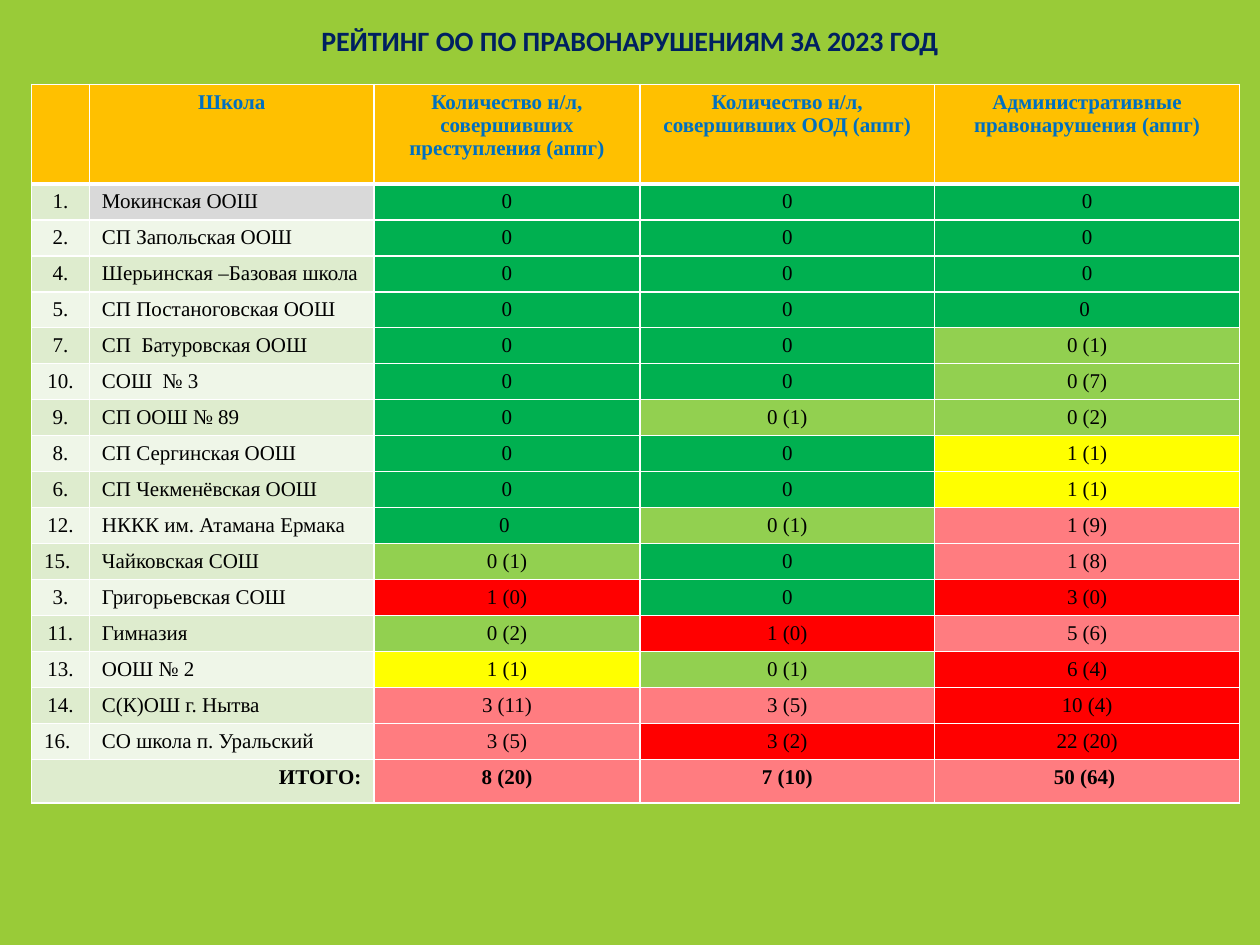
from lxml.etree import SubElement
from pptx import Presentation
from pptx.dml.color import RGBColor
from pptx.enum.text import MSO_ANCHOR, PP_ALIGN
from pptx.oxml.ns import qn
from pptx.util import Pt

COLORS = {
    "back": "99CB38", "title": "002060", "head": "FFC000", "label": "0070C0",
    "text": "000000", "line": "FFFFFF", "odd": "DEECCE", "even": "EFF6E8",
    "first": "D9D9D9", "zero": "00B050", "fell": "92D050", "same": "FFFF00",
    "less": "FF7C80", "more": "FF0000",
}
LEFT, MID, RIGHT = PP_ALIGN.LEFT, PP_ALIGN.CENTER, PP_ALIGN.RIGHT

HEADS = ["", "Школа", "Количество н/л, совершивших преступления (аппг)",
         "Количество н/л, совершивших ООД (аппг)",
         "Административные правонарушения (аппг)"]
SCHOOLS = [
    ("1.", "Мокинская ООШ", "0", "0", "0"),
    ("2.", "СП Запольская ООШ", "0", "0", "0"),
    ("4.", "Шерьинская –Базовая школа", "0", "0", "0"),
    ("5.", "СП Постаноговская ООШ", "0", "0", "0 "),
    ("7.", "СП  Батуровская ООШ", "0", "0", "0 (1)"),
    ("10.", "СОШ  № 3", "0", "0", "0 (7)"),
    ("9.", "СП ООШ № 89", "0", "0 (1)", "0 (2)"),
    ("8.", "СП Сергинская ООШ", "0", "0", "1 (1)"),
    ("6.", "СП Чекменёвская ООШ", "0", "0", "1 (1)"),
    ("12.", "НККК им. Атамана Ермака", "0 ", "0 (1)", "1 (9)"),
    ("15.", "Чайковская СОШ", "0 (1)", "0", "1 (8)"),
    ("3.", "Григорьевская СОШ", "1 (0)", "0", "3 (0)"),
    ("11.", "Гимназия", "0 (2)", "1 (0)", "5 (6)"),
    ("13.", "ООШ № 2", "1 (1)", "0 (1)", "6 (4)"),
    ("14.", "С(К)ОШ г. Нытва", "3 (11)", "3 (5)", "10 (4)"),
    ("16.", "СО школа п. Уральский", "3 (5)", "3 (2)", "22 (20)"),
]
TOTAL = ["ИТОГО:", "", "8 (20)", "7 (10)", "50 (64) "]
FLUSH = {"15.", "16."}
WIDTHS = [33.1, 162.7, 151.9, 168.5, 174.2]
HEIGHTS = [56.9] + [20.5] * len(SCHOOLS) + [25]


def paint(name):
    return RGBColor.from_string(COLORS[name])


def write(frame, text, font="Times New Roman", size=12, color="text",
          bold=False, align=MID, space=None):
    para = frame.paragraphs[0]
    para.alignment = align
    if space:
        para.line_spacing = space
    if not text:
        return
    run = para.add_run()
    run.text = text
    run.font.name = font
    run.font.size = Pt(size)
    run.font.bold = bold
    run.font.color.rgb = paint(color)


def rate(text):
    """Name the colour for a count set against last year's count."""
    now, _, past = text.strip().rstrip(")").partition(" (")
    if not past:
        return "zero"
    now, past = int(now), int(past)
    if now == 0:
        return "fell"
    if now == past:
        return "same"
    return "less" if now < past else "more"


class Deck:
    def __init__(self, wide, high):
        self.show = Presentation()
        self.show.slide_width, self.show.slide_height = Pt(wide), Pt(high)
        self.slide = self.show.slides.add_slide(self.show.slide_layouts[5])
        fill = self.slide.background.fill
        fill.solid()
        fill.fore_color.rgb = paint("back")

    def title(self, text, left, top, wide, high):
        box = self.slide.shapes.title
        box.left, box.top = Pt(left), Pt(top)
        box.width, box.height = Pt(wide), Pt(high)
        box.text_frame.word_wrap = True
        box.text_frame.vertical_anchor = MSO_ANCHOR.MIDDLE
        write(box.text_frame, text, font="Calibri", size=16, color="title",
              bold=True, space=0.9)

    def grid(self, left, top, widths, heights):
        shape = self.slide.shapes.add_table(
            len(heights), len(widths), Pt(left), Pt(top),
            Pt(sum(widths)), Pt(sum(heights)))
        table = shape.table
        for col, wide in zip(table.columns, widths):
            col.width = Pt(wide)
        for row, high in zip(table.rows, heights):
            row.height = Pt(high)
        return table

    def cell(self, cell, text, fill, top=1, base=1, **style):
        # Borders come before the fill in the cell's XML
        props = cell._tc.get_or_add_tcPr()
        for side, width in zip("LRTB", (1, 1, top, base)):
            line = SubElement(props, qn(f"a:ln{side}"), w=str(Pt(width)))
            solid = SubElement(line, qn("a:solidFill"))
            SubElement(solid, qn("a:srgbClr"), val=COLORS["line"])
        cell.fill.solid()
        cell.fill.fore_color.rgb = paint(fill)
        write(cell.text_frame, text, **style)


def main():
    deck = Deck(720, 540)
    deck.title("РЕЙТИНГ ОО ПО ПРАВОНАРУШЕНИЯМ ЗА 2023 ГОД", 0, 0, 720, 48.2)
    table = deck.grid(18, 48.2, WIDTHS, HEIGHTS)

    # Heading row
    for col, text in enumerate(HEADS):
        deck.cell(table.cell(0, col), text, "head", base=3,
                  color="label", bold=True)

    # Schools and total, coloured by rule
    last = len(SCHOOLS) + 1
    for row, items in enumerate(SCHOOLS + [TOTAL], 1):
        band = "odd" if row % 2 else "even"
        for col, text in enumerate(items):
            fill = rate(text) if col > 1 else band
            if (row, col) == (1, 1):
                fill = "first"
            align = LEFT if col == 1 or text in FLUSH else MID
            if row == last and col < 2:
                align = RIGHT
            deck.cell(table.cell(row, col), text, fill, align=align,
                      top=3 if row == 1 else 1, bold=row == last)
    table.cell(last, 0).merge(table.cell(last, 1))

    deck.show.save("out.pptx")


if __name__ == "__main__":
    main()
